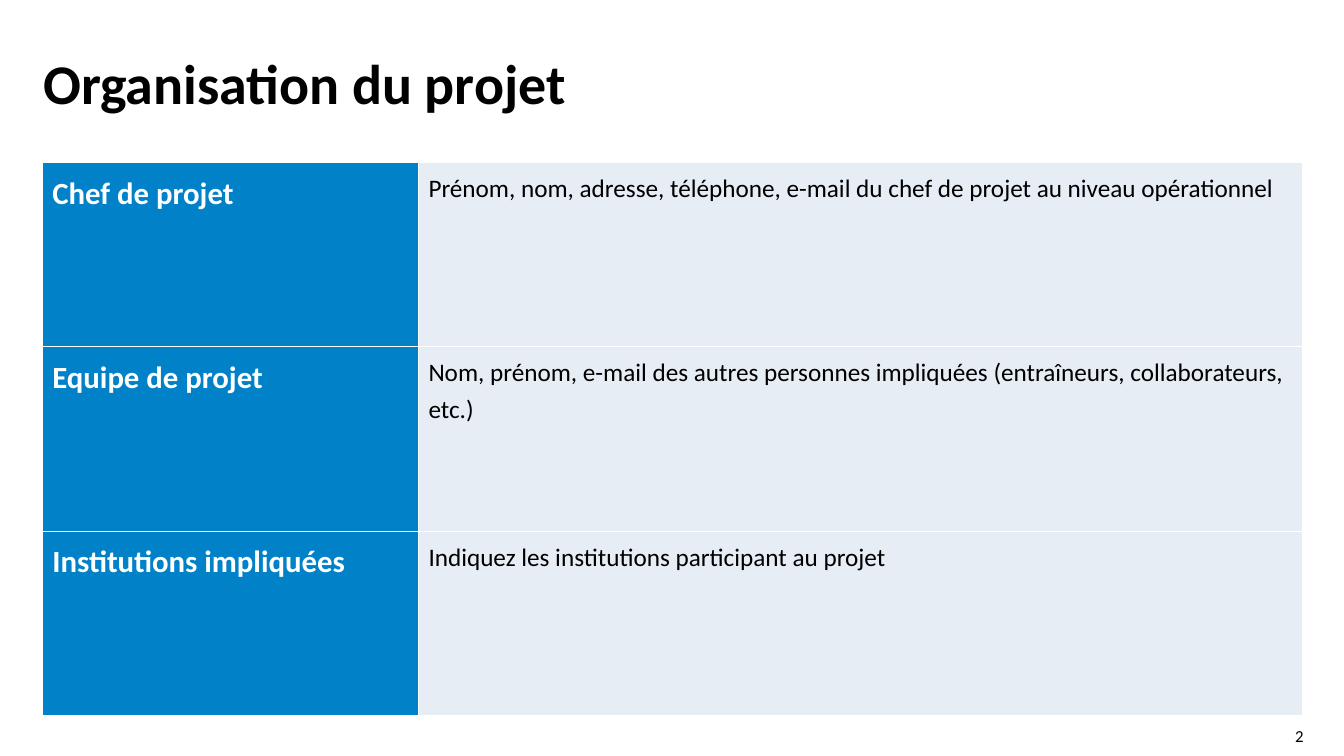
from pptx import Presentation
from pptx.dml.color import RGBColor
from pptx.enum.text import MSO_ANCHOR as Anchor, PP_ALIGN as Align
from pptx.util import Inches, Pt

TITLE = "Organisation du projet"
NUMBER = "2"
ROWS = [
    ("Chef de projet",
     "Prénom, nom, adresse, téléphone, e-mail du chef de projet au niveau opérationnel"),
    ("Equipe de projet",
     "Nom, prénom, e-mail des autres personnes impliquées (entraîneurs, collaborateurs, etc.)"),
    ("Institutions impliquées",
     "Indiquez les institutions participant au projet"),
]
FONT = "Calibri"
BLUE = RGBColor(0x00, 0x81, 0xC8)
PALE = RGBColor(0xE7, 0xED, 0xF5)
WHITE = RGBColor(0xFF, 0xFF, 0xFF)
BLACK = RGBColor(0x00, 0x00, 0x00)
COLUMNS = [(3.73, BLUE, 22, WHITE, True), (8.77, PALE, 18, BLACK, False)]
HEIGHT = 1.83


def write(frame, text, size, color, bold=False, space=1.0, align=Align.LEFT):
    frame.text = text
    frame.word_wrap = True
    para = frame.paragraphs[0]
    para.line_spacing = space
    para.alignment = align
    font = para.runs[0].font
    font.name, font.size, font.bold = FONT, Pt(size), bold
    font.color.rgb = color


def trim(frame, anchor):
    frame.margin_left = frame.margin_right = 0
    frame.margin_top = frame.margin_bottom = 0
    frame.vertical_anchor = anchor


deck = Presentation()
deck.slide_width, deck.slide_height = Inches(13.33), Inches(7.5)
slide = deck.slides.add_slide(deck.slide_layouts[5])

title = slide.shapes.title
title.left, title.top = Inches(0.43), Inches(0.56)
title.width, title.height = Inches(10), Inches(0.85)
write(title.text_frame, TITLE, 40, BLACK, True, 0.9)
trim(title.text_frame, Anchor.TOP)

width = sum(column[0] for column in COLUMNS)
table = slide.shapes.add_table(
    len(ROWS), len(COLUMNS), Inches(0.42), Inches(1.61),
    Inches(width), Inches(HEIGHT * len(ROWS))).table
table.first_row = table.horz_banding = False
for col, (wide, fill, size, color, bold) in enumerate(COLUMNS):
    table.columns[col].width = Inches(wide)
    for row, texts in enumerate(ROWS):
        cell = table.cell(row, col)
        cell.fill.solid()
        cell.fill.fore_color.rgb = fill
        write(cell.text_frame, texts[col], size, color, bold, 1.2)

number = slide.shapes.add_textbox(
    Inches(12.46), Inches(7.2), Inches(0.47), Inches(0.2)).text_frame
write(number, NUMBER, 12, BLACK, align=Align.RIGHT)
trim(number, Anchor.MIDDLE)

deck.save("out.pptx")
